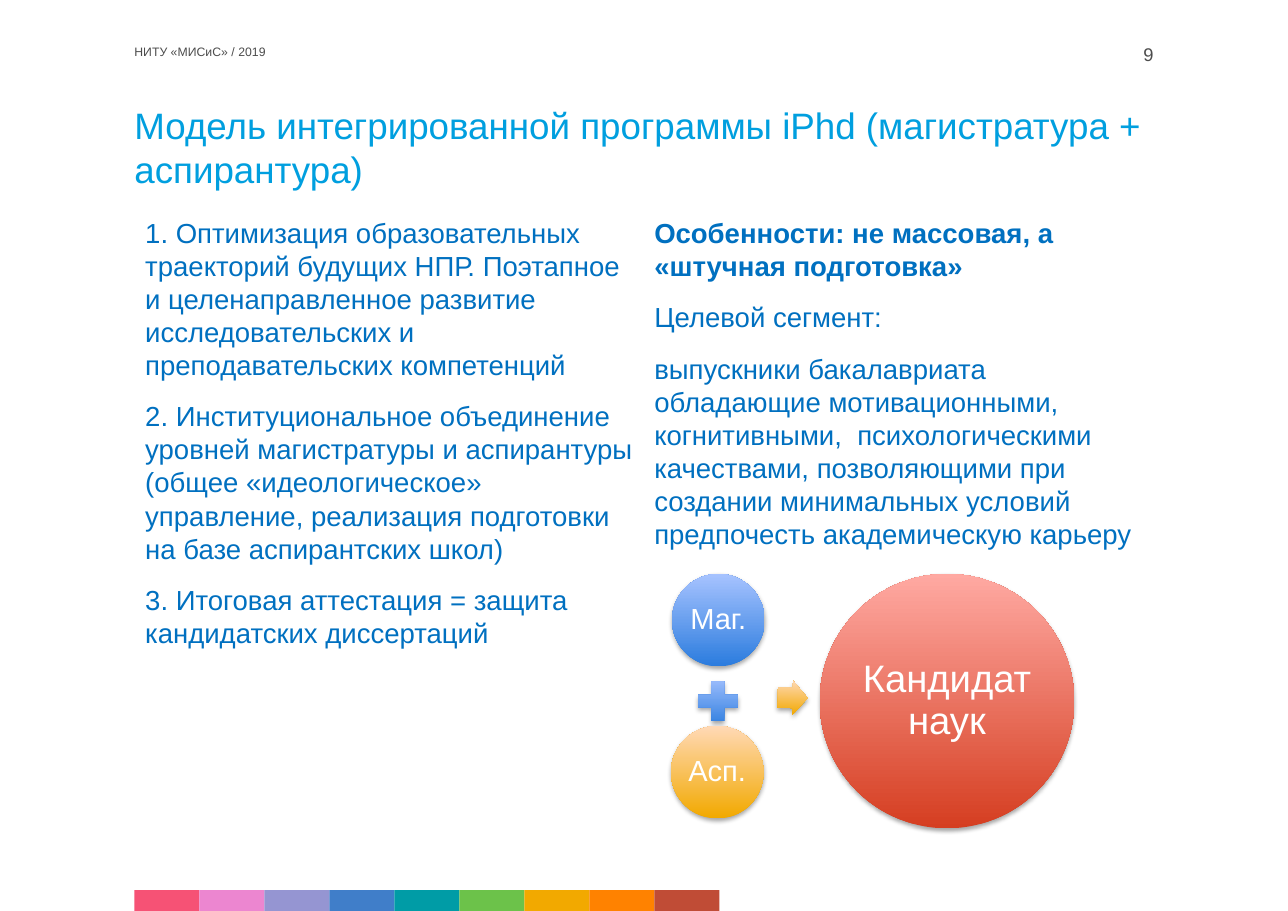
from lxml import etree
from pptx import Presentation
from pptx import util as u
from pptx.dml.color import RGBColor
from pptx.enum import shapes, text
from pptx.oxml import ns

COLORS = {
    "gray": "4C4C4C", "title": "009FDF", "body": "0070C0", "white": "FFFFFF",
    "shadow": "000000",
    "blue_dark": "2B7CDE", "blue_light": "A7C3FF",
    "amber_dark": "F2A900", "amber_light": "FFD9B6",
    "red_dark": "D53E21", "red_light": "FFA9A2",
}
STRIPE = ["F65275", "EC86D0", "9595D2", "407EC9", "009CA6",
          "6CC24A", "F2A900", "FF8200", "C04C36"]
GOALS = [
    "1. Оптимизация образовательных траекторий будущих НПР. Поэтапное и "
    "целенаправленное развитие исследовательских и преподавательских компетенций",
    "2. Институциональное объединение уровней магистратуры и аспирантуры (общее "
    "«идеологическое» управление, реализация подготовки на базе аспирантских школ)",
    "3. Итоговая аттестация = защита кандидатских диссертаций",
]
FEATURES = [
    "Особенности: не массовая, а «штучная подготовка»",
    "Целевой сегмент:",
    "выпускники бакалавриата обладающие мотивационными, когнитивными,  "
    "психологическими качествами, позволяющими при создании минимальных условий "
    "предпочесть академическую карьеру",
]


def rgb(name):
    return RGBColor.from_string(COLORS[name])


def inches(*lengths):
    return [u.Inches(length) for length in lengths]


def set_font(paragraph, size, color, bold=False):
    for run in paragraph.runs:
        run.font.name = "Arial"
        run.font.size = u.Pt(size)
        run.font.color.rgb = rgb(color)
        run.font.bold = bold


def set_margins(frame, margin):
    frame.margin_left = frame.margin_right = u.Inches(margin)
    frame.margin_top = frame.margin_bottom = u.Inches(margin)


def add_title(slide, title):
    shape = slide.shapes.title
    shape.left, shape.top, shape.width, shape.height = inches(1.22, 0.93, 9.25, 0.98)
    frame = shape.text_frame
    frame.text = title
    frame.auto_size = text.MSO_AUTO_SIZE.NONE
    frame.vertical_anchor = text.MSO_ANCHOR.TOP
    set_margins(frame, 0)
    paragraph = frame.paragraphs[0]
    paragraph.alignment = text.PP_ALIGN.LEFT
    paragraph.line_spacing = u.Pt(28.8)
    set_font(paragraph, 24, "title")


def add_header(slide, box, label, size, alignment):
    frame = slide.shapes.add_textbox(*inches(*box)).text_frame
    frame.word_wrap = True
    set_margins(frame, 0)
    frame.text = label
    frame.paragraphs[0].alignment = alignment
    set_font(frame.paragraphs[0], size, "gray")


def add_column(slide, box, lines, bold_first=False):
    frame = slide.shapes.add_textbox(*inches(*box)).text_frame
    frame.word_wrap = True
    frame.text = "\n".join(lines)
    for index, paragraph in enumerate(frame.paragraphs):
        paragraph.space_after = u.Pt(12)
        set_font(paragraph, 18, "body", bold_first and index == 0)


def add_stripe(slide):
    width = 0.59
    for index, color in enumerate(STRIPE):
        shape = slide.shapes.add_shape(
            shapes.MSO_SHAPE.RECTANGLE,
            *inches(1.22 + index * width, 8.08, width, 0.2))
        shape.shadow.inherit = False
        shape.fill.solid()
        shape.fill.fore_color.rgb = RGBColor.from_string(color)
        shape.line.fill.background()


def add_soft_shadow(shape):
    shape.shadow.inherit = False
    effects = shape._element.spPr.find(ns.qn("a:effectLst"))
    shadow = etree.SubElement(
        effects, ns.qn("a:outerShdw"), blurRad=str(u.Pt(3.1)),
        dist=str(u.Pt(1.8)), dir="5400000", rotWithShape="0")
    color = etree.SubElement(shadow, ns.qn("a:srgbClr"), val=COLORS["shadow"])
    etree.SubElement(color, ns.qn("a:alpha"), val="35000")


def add_glossy_shape(slide, kind, box, hue):
    """Add a shape that shades from dark at the bottom to light at the top."""
    shape = slide.shapes.add_shape(kind, *inches(*box))
    shape.fill.gradient()
    shape.fill.gradient_angle = 90
    for stop, tone, position in zip(shape.fill.gradient_stops, ("dark", "light"), (0, 1)):
        stop.color.rgb = rgb(f"{hue}_{tone}")
        stop.position = position
    shape.line.fill.background()
    add_soft_shadow(shape)
    return shape


def add_circle(slide, left, top, diameter, hue, label, size):
    shape = add_glossy_shape(
        slide, shapes.MSO_SHAPE.OVAL, (left, top, diameter, diameter), hue)
    frame = shape.text_frame
    frame.text = label
    frame.word_wrap = True
    frame.vertical_anchor = text.MSO_ANCHOR.MIDDLE
    set_margins(frame, 0.03)
    paragraph = frame.paragraphs[0]
    paragraph.alignment = text.PP_ALIGN.CENTER
    paragraph.line_spacing = 0.9
    set_font(paragraph, size, "white")


def add_equation(slide):
    add_circle(slide, 6.1, 5.21, 0.84, "blue", "Маг.", 19)
    add_glossy_shape(slide, shapes.MSO_SHAPE.MATH_PLUS, (6.27, 6.12, 0.49, 0.49), "blue")
    add_circle(slide, 6.09, 6.59, 0.84, "amber", "Асп.", 19)
    arrow = add_glossy_shape(
        slide, shapes.MSO_SHAPE.RIGHT_ARROW, (7.06, 6.18, 0.27, 0.31), "amber")
    arrow.adjustments[0] = 0.6
    arrow.rotation = 1.1
    add_circle(slide, 7.44, 5.21, 2.31, "red", "Кандидат наук", 25)


def main():
    presentation = Presentation()
    presentation.slide_width, presentation.slide_height = inches(11.69, 8.27)
    slide = presentation.slides.add_slide(presentation.slide_layouts[5])
    add_stripe(slide)
    add_header(slide, (1.22, 0.4, 8.07, 0.39), "НИТУ «МИСиС» / 2019", 8,
               text.PP_ALIGN.LEFT)
    add_header(slide, (9.49, 0.39, 0.98, 0.39), "9", 12, text.PP_ALIGN.RIGHT)
    add_title(slide, "Модель интегрированной программы iPhd (магистратура + аспирантура)")
    add_column(slide, (1.22, 1.91, 4.63, 4.07), GOALS)
    add_column(slide, (5.84, 1.91, 4.63, 3.16), FEATURES, bold_first=True)
    add_equation(slide)
    presentation.save("out.pptx")


if __name__ == "__main__":
    main()
